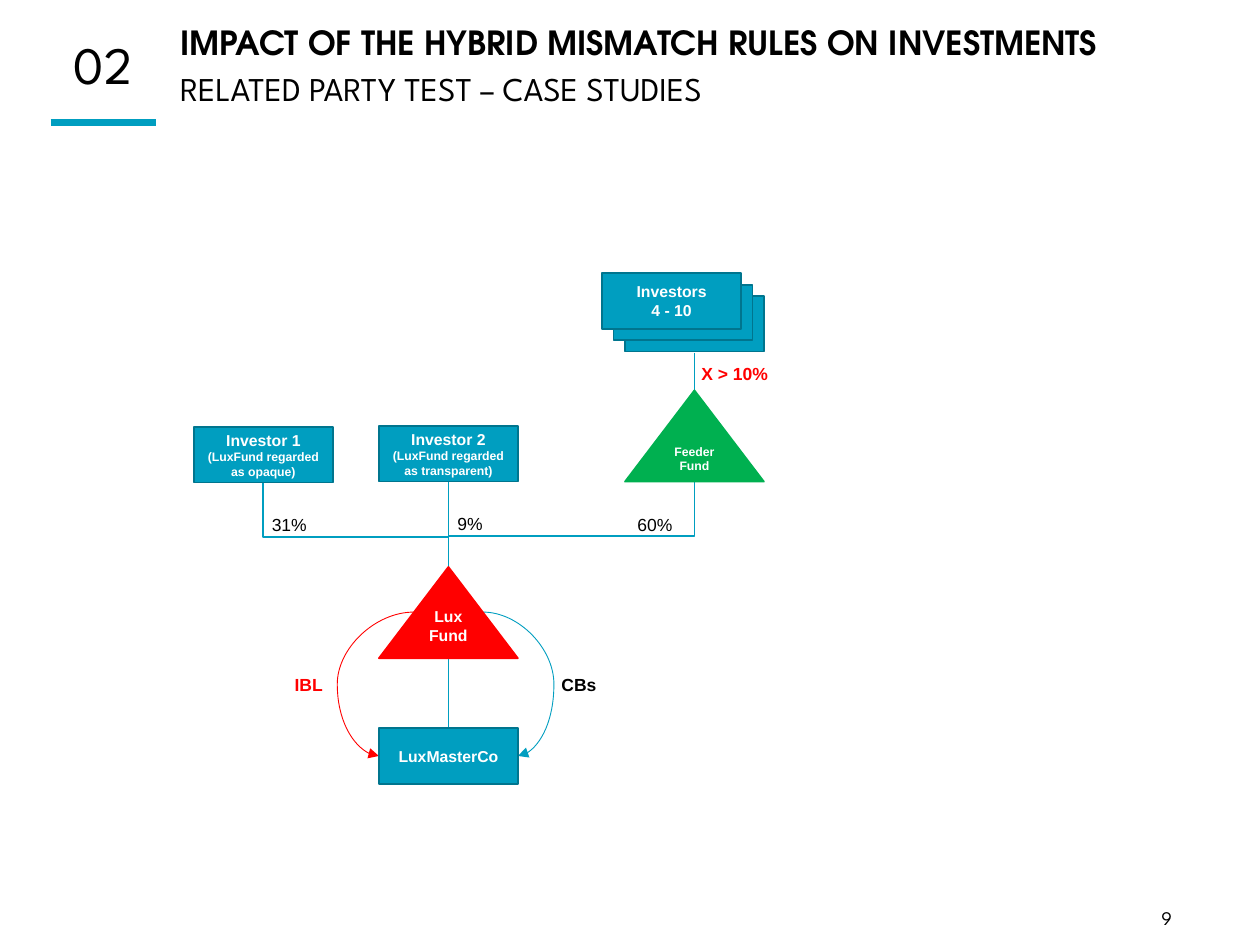
"""Build a slide on the related party test for a fund structure."""
from lxml.etree import SubElement
from pptx import Presentation
from pptx.dml.color import RGBColor
from pptx.enum.shapes import MSO_CONNECTOR, MSO_SHAPE
from pptx.enum.text import MSO_ANCHOR, PP_ALIGN
from pptx.oxml.ns import qn
from pptx.util import Cm, Pt

TEAL, EDGE, RED, GREEN = "009EC0", "00758E", "FF0000", "00B050"
BLACK, WHITE = "000000", "FFFFFF"
SPARTAN, BOLD, ARIAL = "League Spartan", "TeX Gyre Adventor", "Arial"
WIDE, LOW, TALL = 2.8, 1.12, 1.84
LEFT, MID, RIGHT = 5.31, 9.04, 14.0
STACK, STEP = (13.54, 5.51), 0.23

HEADS = [
    ((1.19, 0.69, 1.78, 1.35), [("02", 30, SPARTAN, False)], PP_ALIGN.CENTER),
    ((3.38, 0.69, 21.36, 1.35), [
        ("IMPACT OF THE HYBRID MISMATCH RULES ON INVESTMENTS", 19, BOLD, True),
        ("RELATED PARTY TEST – CASE STUDIES", 19, SPARTAN, False)], PP_ALIGN.LEFT),
    ((22.76, 18.16, 1.52, 0.74), [("9", 11, SPARTAN, False)], PP_ALIGN.CENTER),
]
BOXES = [
    (STACK[0] + 2 * STEP, STACK[1] + 2 * STEP, []),
    (STACK[0] + STEP, STACK[1] + STEP, []),
    (*STACK, [("Investors\v4 - 10", 9)]),
    (LEFT, 8.61, [("Investor 1", 9), ("(LuxFund regarded as opaque)", 7)]),
    (MID, 8.59, [("Investor 2", 9), ("(LuxFund regarded as transparent)", 7)]),
    (MID, 14.68, [("LuxMasterCo", 9)]),
]
FUNDS = [
    (MID, 11.43, RED, [("Lux Fund", 9)], 0.5),
    (RIGHT, 7.87, GREEN, [("Feeder\vFund", 7)], 0.13),
]
LINES = [
    (1.02, 2.46, 3.15, 2.46, 4),
    (MID, 13.26, MID, 14.68, 1),
    (MID, 9.7, MID, 11.43, 1),
]
BENDS = [(LEFT, 9.73, 64500), (RIGHT, 7.11, 85700)]
CURVES = [(-1, RED, 220000), (1, TEAL, 204000)]
LABELS = [
    ("IBL", 5.69, 13.46, RED, True),
    ("CBs", 11.07, 13.46, BLACK, True),
    ("31%", 5.23, 10.24, BLACK, False),
    ("9%", 8.97, 10.21, BLACK, False),
    ("X > 10%", 13.89, 7.19, RED, True),
    ("60%", 12.6, 10.24, BLACK, False),
]


def color(code):
    return RGBColor.from_string(code)


def style(font, size, name, code, bold):
    font.size, font.name, font.bold = Pt(size), name, bold
    font.color.rgb = color(code)


def write(frame, rows, code, align):
    for i, (text, size, name, bold) in enumerate(rows):
        para = frame.add_paragraph() if i else frame.paragraphs[0]
        para.text, para.alignment = text, align
        style(para.font, size, name, code, bold)


def shape(slide, kind, x, y, tall, fill, edge, rows):
    node = slide.shapes.add_shape(
        kind, Cm(x - WIDE / 2), Cm(y), Cm(WIDE), Cm(tall))
    node.shadow.inherit = False
    node.fill.solid()
    node.fill.fore_color.rgb = color(fill)
    node.line.color.rgb = color(edge)
    node.line.width = Pt(1)
    frame = node.text_frame
    frame.word_wrap, frame.vertical_anchor = True, MSO_ANCHOR.MIDDLE
    rows = [(text, size, ARIAL, True) for text, size in rows]
    write(frame, rows, WHITE, PP_ALIGN.CENTER)
    return frame


def link(slide, kind, ends, code, width, bend=None):
    line = slide.shapes.add_connector(kind, *(Cm(v) for v in ends))
    line.line.color.rgb = color(code)
    line.line.width = Pt(width)
    props = line._element.spPr
    SubElement(props, qn("a:effectLst"))
    if bend:
        guides = props.find(qn("a:prstGeom")).get_or_add_avLst()
        SubElement(guides, qn("a:gd"), name="adj1", fmla=f"val {bend}")
    return line


def label(slide, area, rows, code, align, anchor):
    frame = slide.shapes.add_textbox(*(Cm(v) for v in area)).text_frame
    frame.word_wrap, frame.vertical_anchor = True, anchor
    write(frame, rows, code, align)
    return frame


def elbow(slide, x, y, bend):
    end = 11.43
    mid_x, mid_y = (x + MID) / 2, (y + end) / 2
    half, rise = (end - y) / 2, abs(MID - x) / 2
    side = 1 if x > MID else -1
    ends = (mid_x - side * half, mid_y - rise, mid_x + side * half, mid_y + rise)
    line = link(slide, MSO_CONNECTOR.ELBOW, ends, TEAL, 1, bend)
    line._element.spPr.find(qn("a:xfrm")).set("rot", str(90 * 60000 * (2 - side)))


def curve(slide, side, code, bend):
    ends = (MID + side * WIDE / 4, 12.34, MID + side * WIDE / 2, 15.24)
    line = link(slide, MSO_CONNECTOR.CURVE, ends, code, 0.5, bend)
    SubElement(line.line._get_or_add_ln(), qn("a:tailEnd"), type="triangle")


def main():
    deck = Presentation()
    deck.slide_width, deck.slide_height = Cm(25.4), Cm(19.05)
    slide = deck.slides.add_slide(deck.slide_layouts[6])
    for area, rows, align in HEADS:
        frame = label(slide, area, rows, BLACK, align, MSO_ANCHOR.MIDDLE)
        for i, para in enumerate(frame.paragraphs):
            para.line_spacing = 0.9
            para.space_before = Pt(6 if i else 0)
    for *ends, width in LINES:
        link(slide, MSO_CONNECTOR.STRAIGHT, ends, TEAL, width)
    for bend in BENDS:
        elbow(slide, *bend)
    for arc in CURVES:
        curve(slide, *arc)
    for x, y, rows in BOXES:
        shape(slide, MSO_SHAPE.RECTANGLE, x, y, LOW, TEAL, EDGE, rows)
    for x, y, fill, rows, base in FUNDS:
        frame = shape(slide, MSO_SHAPE.ISOSCELES_TRIANGLE, x, y, TALL, fill, fill, rows)
        frame.margin_bottom = Cm(base)
    for text, x, y, code, bold in LABELS:
        label(slide, (x, y, 2.4, 0.68), [(text, 10, ARIAL, bold)], code,
              PP_ALIGN.LEFT, MSO_ANCHOR.TOP)
    deck.save("out.pptx")


if __name__ == "__main__":
    main()
